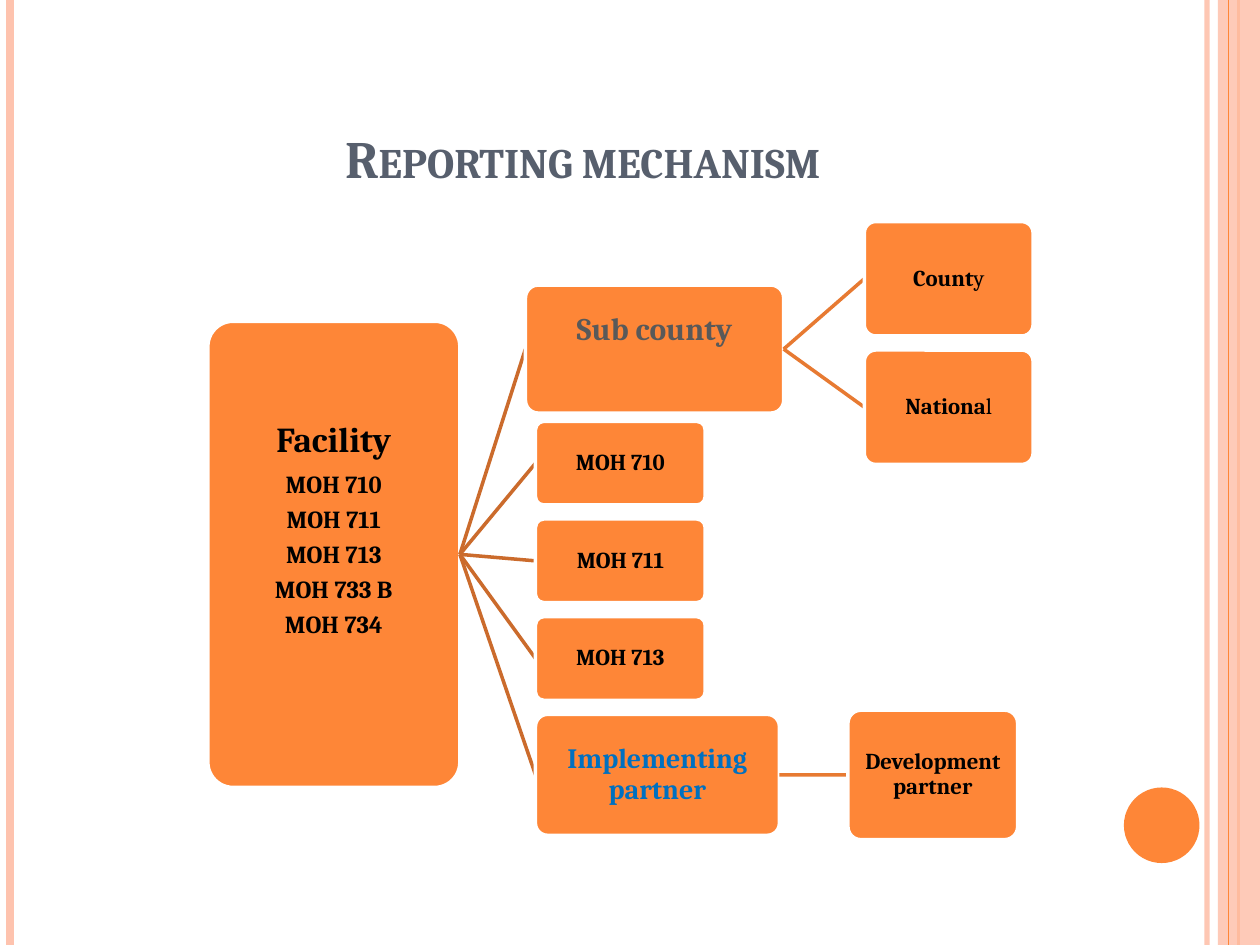
from lxml.etree import SubElement
from pptx import Presentation
from pptx.dml.color import RGBColor
from pptx.enum.shapes import MSO_CONNECTOR, MSO_SHAPE
from pptx.enum.text import MSO_ANCHOR, PP_ALIGN
from pptx.oxml.ns import qn
from pptx.util import Pt

INK = {
    "orange": "FE8637", "peach": "FEC3AE", "rust": "CB6B2C", "amber": "E77A32",
    "white": "FFFFFF", "black": "000000", "gray": "595959", "blue": "0070C0",
    "slate": "575F6D",
}
HUE = {name: RGBColor.from_string(code) for name, code in INK.items()}

deck = Presentation()
deck.slide_width, deck.slide_height = Pt(720), Pt(540)
slide = deck.slides.add_slide(deck.slide_layouts[6])
shapes = slide.shapes


def add_line(x1, y1, x2, y2, color, width, alpha=100):
    line = shapes.add_connector(MSO_CONNECTOR.STRAIGHT, Pt(x1), Pt(y1), Pt(x2), Pt(y2))
    line.line.color.rgb = HUE[color]
    line.line.width = Pt(width)
    SubElement(line._element.spPr, qn("a:effectLst"))
    if alpha < 100:
        tone = line._element.spPr.find(".//" + qn("a:srgbClr"))
        SubElement(tone, qn("a:alpha"), val=str(alpha * 1000))


def add_form(kind, x, y, w, h, color):
    form = shapes.add_shape(kind, Pt(x), Pt(y), Pt(w), Pt(h))
    form.shadow.inherit = False
    form.fill.solid()
    form.fill.fore_color.rgb = HUE[color]
    form.line.fill.background()
    return form


for x, color, width, alpha in [
    (689.76, "peach", 3, 93), (5.76, "peach", 4.5, 100), (707.76, "orange", 1.5, 100),
]:
    add_line(x, 0, x, 540, color, width, alpha)
band = add_form(MSO_SHAPE.RECTANGLE, 696, 0, 24, 540, "peach")
SubElement(band._element.spPr.find(".//" + qn("a:srgbClr")), qn("a:alpha"), val="87000")
add_line(702, 0, 702, 540, "orange", 0.75)
add_form(MSO_SHAPE.OVAL, 642.24, 450, 43.2, 43.2, "orange")

forms = [f"MOH {code}" for code in ("710", "711", "713", "733 B", "734")]
steps = [
    ("hub", None, 118.8, 183.6, 144, 266.4, "black", 28,
     [("Facility", 20, "")] + [(form, 14, "") for form in forms]),
    ("sub", "hub", 300.24, 162.9, 147.6, 73.2, "gray", 22, [("Sub county", 18, "")]),
    ("county", "sub", 493.92, 126.6, 96.48, 65.4, "black", 0.72, [("Count", 13, "y")]),
    ("nation", "sub", 493.92, 200, 96.48, 65.4, "black", 0.72, [("Nationa", 13, "l")]),
]
for i, form in enumerate(forms[:3]):
    steps.append((form, "hub", 306, 240.8 + 55.8 * i, 97, 47.8, "black", 0.72,
                  [(form, 13, "")]))
steps += [
    ("partner", "hub", 306, 408.24, 139.4, 69.1, "blue", 0.72,
     [("Implementing partner", 16, "")]),
    ("donor", "partner", 484.56, 405.8, 97, 74, "black", 0.72,
     [("Development partner", 13, "")]),
]

ports = {}
for name, source, x, y, w, h, color, foot, rows in steps:
    if source:
        tone = "rust" if source == "hub" else "amber"
        add_line(*ports[source], x, y + h / 2, tone, 2)
    ports[name] = (x + w, y + h / 2)
    box = add_form(MSO_SHAPE.ROUNDED_RECTANGLE, x, y, w, h, "orange")
    box.adjustments[0] = 0.1
    box.line.color.rgb = HUE["white"]
    box.line.width = Pt(2)
    frame = box.text_frame
    layout = {
        "word_wrap": True, "vertical_anchor": MSO_ANCHOR.MIDDLE,
        "margin_left": Pt(0.72), "margin_right": Pt(0.72),
        "margin_top": Pt(0.72), "margin_bottom": Pt(foot),
    }
    for key, value in layout.items():
        setattr(frame, key, value)
    for i, (text, size, tail) in enumerate(rows):
        para = frame.add_paragraph() if i else frame.paragraphs[0]
        spacing = {"alignment": PP_ALIGN.CENTER, "line_spacing": 0.9,
                   "space_after": Pt(round(0.35 * size, 2))}
        for key, value in spacing.items():
            setattr(para, key, value)
        for part, bold in ((text, True), (tail, False)):
            if part:
                run = para.add_run()
                run.text = part
                run.font.color.rgb = HUE[color]
                for key, value in {"name": "Cambria", "size": Pt(size), "bold": bold}.items():
                    setattr(run.font, key, value)

title = shapes.add_textbox(Pt(39), Pt(21.6), Pt(588), Pt(90))
frame = title.text_frame
frame.word_wrap = True
frame.vertical_anchor = MSO_ANCHOR.BOTTOM
para = frame.paragraphs[0]
para.alignment = PP_ALIGN.CENTER
run = para.add_run()
run.text = "Reporting mechanism"
run.font.color.rgb = HUE["slate"]
for key, value in {"name": "Cambria", "size": Pt(30), "bold": True}.items():
    setattr(run.font, key, value)
run._r.get_or_add_rPr().set("cap", "small")

deck.save("out.pptx")
